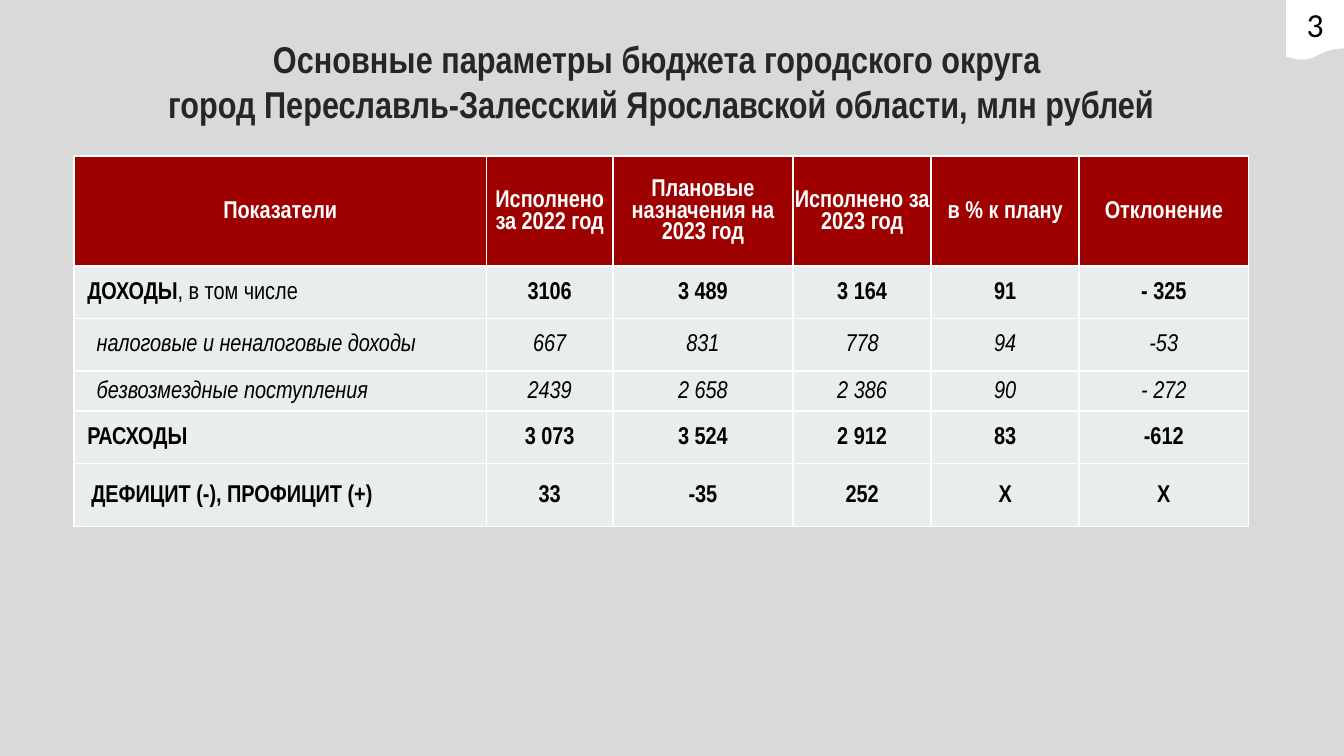
from pptx import Presentation
from pptx.dml.color import RGBColor
from pptx.enum.shapes import MSO_SHAPE as Shape
from pptx.enum.text import MSO_ANCHOR as Anchor, PP_ALIGN as Align
from pptx.oxml import parse_xml
from pptx.oxml.ns import nsdecls
from pptx.util import Inches, Pt

FONT = "Arial Narrow"
TITLE = [
    "Основные параметры бюджета городского округа ",
    "город Переславль-Залесский Ярославской области, млн рублей",
]
HEADERS = [
    "Показатели", "Исполнено за 2022 год", "Плановые назначения на 2023 год",
    "Исполнено за 2023 год", "в % к плану", "Отклонение",
]
ROWS = [
    ("ДОХОДЫ", ", в том числе", 0.09, True, ["3106", "3 489", "3 164", "91", "- 325"]),
    ("налоговые и неналоговые доходы", "", 0.16, False, ["667", "831", "778", "94", "-53"]),
    ("безвозмездные поступления", "", 0.16, False, ["2439", "2 658", "2 386", "90", "- 272"]),
    ("РАСХОДЫ", "", 0.09, True, ["3 073", "3 524", "2 912", "83", "-612"]),
    ("ДЕФИЦИТ (-), ПРОФИЦИТ (+)", "", 0.12, True, ["33", "-35", "252", "Х", "Х"]),
]
COLUMN_WIDTHS = [3.07, 0.94, 1.34, 1.03, 1.1, 1.26]
ROW_HEIGHTS = [0.82, 0.39, 0.39, 0.3, 0.39, 0.47]


def color(value):
    return RGBColor.from_string(value)


def paint(item, value):
    item.fill.solid()
    item.fill.fore_color.rgb = color(value)


def style(span, size, value, bold=False, italic=False, name=FONT):
    span.font.name = name
    span.font.size = Pt(size)
    span.font.color.rgb = color(value)
    span.font.bold = bold
    span.font.italic = italic


def set_borders(cell, value, width):
    props = cell._tc.get_or_add_tcPr()
    for index, side in enumerate(("lnL", "lnR", "lnT", "lnB")):
        props.insert(index, parse_xml(
            f'<a:{side} {nsdecls("a")} w="{Pt(width)}"><a:solidFill>'
            f'<a:srgbClr val="{value}"/></a:solidFill></a:{side}>'))


def fill_cell(cell, text, fill, value, bold, italic=False, indent=None, tail=""):
    paint(cell, fill)
    set_borders(cell, "FFFFFF", 1)
    cell.vertical_anchor = Anchor.MIDDLE
    cell.margin_left = cell.margin_right = cell.margin_top = Inches(0.01)
    cell.margin_bottom = 0
    para = cell.text_frame.paragraphs[0]
    para.text = text
    para.line_spacing = 0.95
    style(para.runs[0], 13, value, bold, italic)
    if indent is None:
        para.alignment = Align.CENTER
    else:
        props = para._p.get_or_add_pPr()
        props.set("marL", str(Inches(indent)))
        props.set("indent", "0")
    if tail:
        span = para.add_run()
        span.text = tail
        style(span, 13, value)


def add_title(page, left, top, width, height):
    box = page.shapes.add_textbox(Inches(left), Inches(top), Inches(width), Inches(height))
    frame = box.text_frame
    frame.word_wrap = True
    frame.vertical_anchor = Anchor.MIDDLE
    frame.margin_left = frame.margin_right = Inches(0.07)
    frame.margin_top = frame.margin_bottom = Inches(0.04)
    frame.text = "\n".join(TITLE)
    for para in frame.paragraphs:
        para.alignment = Align.CENTER
        style(para.runs[0], 20, "262626", bold=True)


def add_budget_table(page, left, top):
    table = page.shapes.add_table(
        len(ROW_HEIGHTS), len(COLUMN_WIDTHS), Inches(left), Inches(top),
        Inches(sum(COLUMN_WIDTHS)), Inches(sum(ROW_HEIGHTS))).table
    for column, width in zip(table.columns, COLUMN_WIDTHS):
        column.width = Inches(width)
    for row, height in zip(table.rows, ROW_HEIGHTS):
        row.height = Inches(height)
    for index, header in enumerate(HEADERS):
        fill_cell(table.cell(0, index), header, "9E0000", "FFFFFF", True)
    for line, (label, tail, indent, total, values) in enumerate(ROWS, 1):
        fill_cell(table.cell(line, 0), label, "E9EDED", "000000", total, not total, indent, tail)
        for index, value in enumerate(values, 1):
            fill_cell(table.cell(line, index), value, "E9EDED", "000000", total, not total)


def add_page_number(page, left, top, width, height):
    badge = page.shapes.add_shape(
        Shape.FLOWCHART_DOCUMENT, Inches(left), Inches(top), Inches(width), Inches(height))
    badge.shadow.inherit = False
    paint(badge, "FFFFFF")
    badge.line.fill.background()
    frame = badge.text_frame
    frame.vertical_anchor = Anchor.MIDDLE
    frame.text = "3"
    para = frame.paragraphs[0]
    para.alignment = Align.CENTER
    style(para.runs[0], 18, "000000", name="Calibri")


def main():
    deck = Presentation()
    deck.slide_width = Inches(10)
    deck.slide_height = deck.slide_width * 9 // 16
    page = deck.slides.add_slide(deck.slide_layouts[6])
    paint(page.background, "D9D9D9")
    add_title(page, 1.14, 0.38, 7.56, 0.45)
    add_budget_table(page, 0.55, 1.16)
    add_page_number(page, 9.57, 0, 0.43, 0.45)
    deck.save("out.pptx")


if __name__ == "__main__":
    main()
